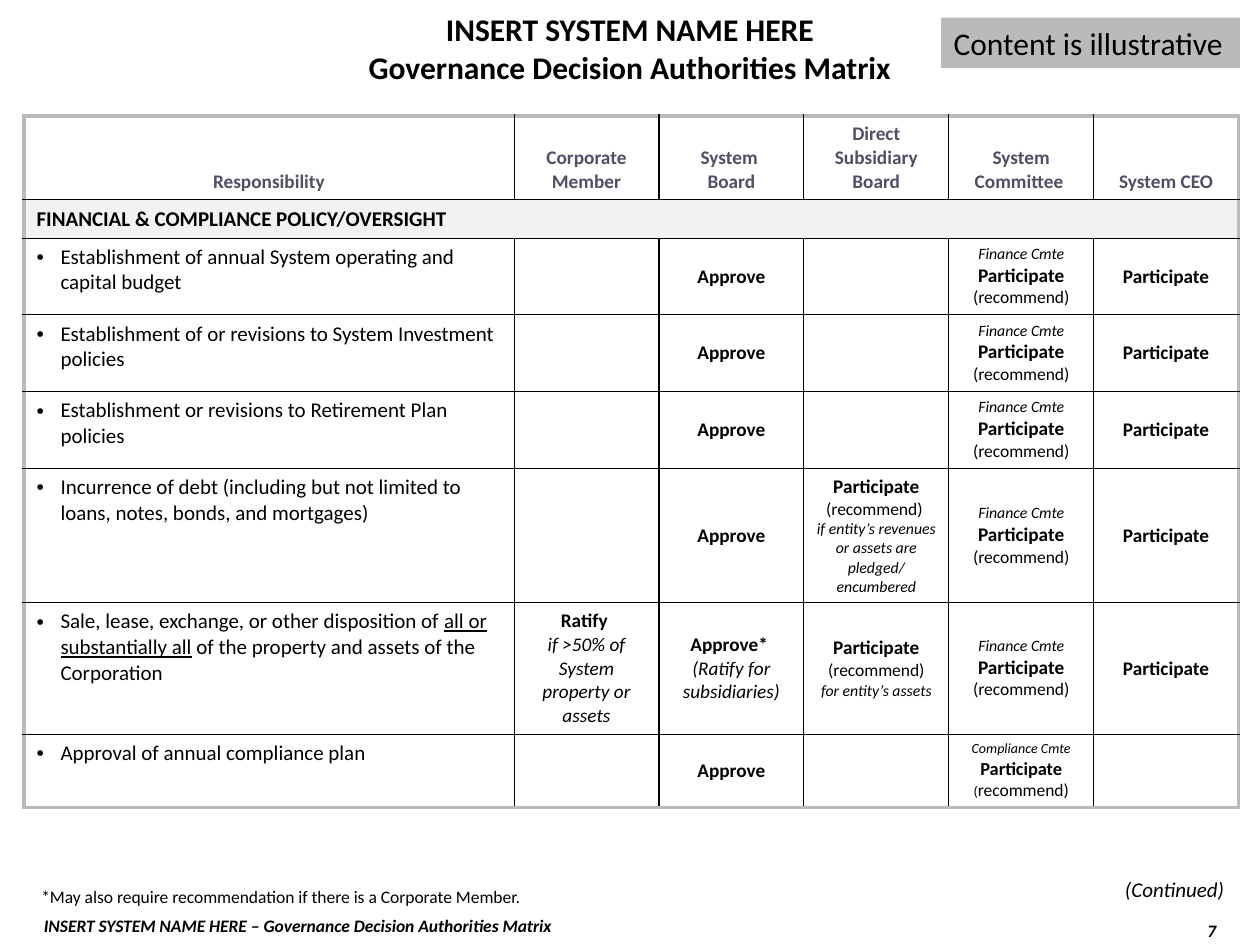
import copy
from dataclasses import dataclass

import lxml.etree
import pptx
import pptx.dml.color
import pptx.enum.shapes
import pptx.enum.text
import pptx.oxml.ns
import pptx.util

Inches = pptx.util.Inches
Align = pptx.enum.text.PP_ALIGN
Anchor = pptx.enum.text.MSO_ANCHOR
qn = pptx.oxml.ns.qn


@dataclass(frozen=True)
class Theme:
    font: str = "Calibri"
    ink: str = "000000"
    heading: str = "4F4F67"
    frame: str = "BABABA"
    section: str = "F2F2F2"
    frame_width: float = 2.25
    grid_width: float = 0.75
    title: float = 18
    body: float = 12
    decision: float = 11
    detail: float = 10
    condition: float = 9
    small: float = 8


THEME = Theme()


@dataclass(frozen=True)
class Words:
    text: str
    size: float = THEME.decision
    bold: bool = False
    italic: bool = False
    underline: bool = False
    color: str = THEME.ink


Entry = list[list[Words]]  # paragraphs of styled words


@dataclass(frozen=True)
class Duty:
    height: float
    responsibility: list[Words]
    member: Entry
    board: Entry
    subsidiary: Entry
    committee: Entry
    ceo: Entry
    committee_anchor: Anchor = Anchor.MIDDLE


def duty_text(text: str, underline: bool = False) -> Words:
    return Words(text, THEME.body, underline=underline)


def decision(text: str, size: float = THEME.decision) -> Words:
    return Words(text, size, bold=True)


def condition(text: str, size: float = THEME.condition) -> Words:
    return Words(text, size, italic=True)


def recommend(text: str = "(recommend)") -> Words:
    return Words(text, THEME.detail)


APPROVE = [[decision("Approve")]]
PARTICIPATE = [[decision("Participate")]]
FINANCE = [[condition("Finance Cmte\n"), decision("Participate\n"), recommend()]]
COMPLIANCE = [[condition("Compliance Cmte\n", THEME.small), decision("Participate\n", 10.5),
               Words("(", THEME.small), recommend("recommend)")]]

HEADINGS = ["Responsibility", "Corporate Member", "System \nBoard",
            "Direct Subsidiary Board", "System Committee ", "System CEO"]
HEADING_HEIGHT, SECTION_HEIGHT = 0.65, 0.3
COLUMN_WIDTHS = [3.89] + [1.15] * 5

DUTIES = [
    Duty(0.6, [duty_text("Establishment of annual System operating and capital budget")],
         [], APPROVE, [], FINANCE, PARTICIPATE),
    Duty(0.6, [duty_text("Establishment of or revisions to System Investment policies")],
         [], APPROVE, [], FINANCE, PARTICIPATE),
    Duty(0.6, [duty_text("Establishment or revisions to Retirement Plan policies")],
         [], APPROVE, [], FINANCE, PARTICIPATE),
    Duty(1.05, [duty_text("Incurrence of debt (including but not limited to loans, notes, "
                          "bonds, and mortgages)")],
         [], APPROVE,
         [[decision("Participate "), recommend("(recommend) \n"),
           condition("if entity’s revenues or assets are pledged/\nencumbered")]],
         FINANCE, PARTICIPATE),
    Duty(1.02, [duty_text("Sale, lease, exchange, or other disposition of "),
                duty_text("all or substantially all", underline=True),
                duty_text(" of the property and assets of the Corporation")],
         [[decision("Ratify \n"),
           condition("if >50% of System property or assets", THEME.decision)]],
         [[decision("Approve* ")], [condition("(Ratify for subsidiaries)", THEME.decision)]],
         [[decision("Participate\n"), recommend("(recommend)\n"),
           condition("for entity’s assets")]],
         FINANCE, PARTICIPATE),
    Duty(0.58, [duty_text("Approval of annual compliance plan")],
         [], APPROVE, [], COMPLIANCE, [], Anchor.TOP),
]


def add_words(paragraph, words: Words) -> None:
    """Add styled runs, giving each line break the format of the run before it."""
    for index, line in enumerate(words.text.split("\n")):
        if index:
            paragraph.add_line_break()
            paragraph._p[-1].append(copy.deepcopy(run._r.rPr))
        if line:
            run = paragraph.add_run()
            run.text = line
            font = run.font
            font.name, font.size = THEME.font, pptx.util.Pt(words.size)
            font.bold, font.italic, font.underline = words.bold, words.italic, words.underline
            font.color.rgb = pptx.dml.color.RGBColor.from_string(words.color)


def write(frame, entry: Entry, align: Align = Align.LEFT) -> None:
    for index, parts in enumerate(entry):
        paragraph = frame.add_paragraph() if index else frame.paragraphs[0]
        paragraph.alignment = align
        for words in parts:
            add_words(paragraph, words)


def set_fill(fill, color: str) -> None:
    fill.solid()
    fill.fore_color.rgb = pptx.dml.color.RGBColor.from_string(color)


def add_bullet(paragraph, indent: float = 0.19) -> None:
    properties = paragraph._p.get_or_add_pPr()
    properties.set("marL", str(Inches(indent)))
    properties.set("indent", str(-Inches(indent)))
    lxml.etree.SubElement(properties, qn("a:buFont"), typeface="Arial")
    lxml.etree.SubElement(properties, qn("a:buChar"), char="•")


def draw_borders(table) -> None:
    """Rule every cell thinly, with a heavier frame round the table."""
    last_row, last_column = len(table.rows) - 1, len(table.columns) - 1
    for row in range(last_row + 1):
        for column in range(last_column + 1):
            cell = table.cell(row, column)
            span = cell.span_width if cell.is_merge_origin else 1
            outer_sides = {"lnL": column == 0, "lnR": column + span - 1 == last_column,
                           "lnT": row == 0, "lnB": row == last_row}
            properties = cell._tc.get_or_add_tcPr()
            for position, (side, outer) in enumerate(outer_sides.items()):
                width = THEME.frame_width if outer else THEME.grid_width
                line = lxml.etree.Element(qn(f"a:{side}"), w=str(pptx.util.Pt(width)))
                solid = lxml.etree.SubElement(line, qn("a:solidFill"))
                lxml.etree.SubElement(solid, qn("a:srgbClr"),
                                      val=THEME.frame if outer else THEME.ink)
                properties.insert(position, line)


def add_matrix(slide) -> None:
    heights = [HEADING_HEIGHT, SECTION_HEIGHT] + [duty.height for duty in DUTIES]
    table = slide.shapes.add_table(
        len(heights), len(COLUMN_WIDTHS), Inches(0.19), Inches(0.92),
        Inches(sum(COLUMN_WIDTHS)), Inches(sum(heights))).table
    table.first_row = table.horz_banding = False
    for column, width in zip(table.columns, COLUMN_WIDTHS):
        column.width = Inches(width)
    for row, height in zip(table.rows, heights):
        row.height = Inches(height)
    for cell in table.iter_cells():
        cell.fill.background()

    for cell, heading in zip(table.rows[0].cells, HEADINGS):
        cell.vertical_anchor = Anchor.BOTTOM
        write(cell.text_frame, [[Words(heading, bold=True, color=THEME.heading)]], Align.CENTER)

    section = table.cell(1, 0)
    section.merge(table.cell(1, len(COLUMN_WIDTHS) - 1))
    set_fill(section.fill, THEME.section)
    write(section.text_frame, [[decision("FINANCIAL & COMPLIANCE POLICY/OVERSIGHT", THEME.body)]])

    for row, duty in enumerate(DUTIES, start=2):
        responsibility = table.cell(row, 0).text_frame
        write(responsibility, [duty.responsibility])
        add_bullet(responsibility.paragraphs[0])
        authorities = [duty.member, duty.board, duty.subsidiary, duty.committee, duty.ceo]
        for column, entry in enumerate(authorities, start=1):
            cell = table.cell(row, column)
            cell.vertical_anchor = Anchor.MIDDLE
            write(cell.text_frame, entry, Align.CENTER)
        table.cell(row, 4).vertical_anchor = duty.committee_anchor
    draw_borders(table)


def add_note(slide, left: float, top: float, width: float, height: float, words: Words,
             align: Align = Align.LEFT, wrap: bool = True) -> None:
    note = slide.shapes.add_textbox(Inches(left), Inches(top), Inches(width), Inches(height))
    note.text_frame.word_wrap = wrap
    write(note.text_frame, [[words]], align)


def add_title(slide) -> None:
    title = slide.shapes.title
    title.left, title.top, title.width, title.height = 0, 0, Inches(10), Inches(0.76)
    title.text_frame.vertical_anchor = Anchor.MIDDLE
    write(title.text_frame, [[decision(
        "INSERT SYSTEM NAME HERE\nGovernance Decision Authorities Matrix", THEME.title)]],
        Align.CENTER)


def add_illustrative_tag(slide) -> None:
    tag = slide.shapes.add_shape(pptx.enum.shapes.MSO_SHAPE.RECTANGLE,
                                 Inches(7.47), Inches(0.14), Inches(2.37), Inches(0.4))
    tag.shadow.inherit = False
    set_fill(tag.fill, THEME.frame)
    tag.line.fill.background()
    tag.text_frame.word_wrap = False
    tag.text_frame.vertical_anchor = Anchor.TOP
    write(tag.text_frame, [[Words("Content is illustrative", THEME.title)]])


def main() -> None:
    deck = pptx.Presentation()
    deck.slide_width, deck.slide_height = Inches(10), Inches(7.5)
    slide = deck.slides.add_slide(deck.slide_layouts[5])
    add_title(slide)
    add_matrix(slide)
    add_note(slide, 0.25, 7.21, 6.5, 0.27, Words(
        "INSERT SYSTEM NAME HERE – Governance Decision Authorities Matrix",
        THEME.detail, bold=True, italic=True))
    add_note(slide, 7.64, 7.25, 2.11, 0.25,
             Words("7", THEME.detail, bold=True, italic=True), Align.RIGHT)
    add_note(slide, 8.83, 6.91, 0.99, 0.3, condition("(Continued)", THEME.body), wrap=False)
    add_illustrative_tag(slide)
    add_note(slide, 0.23, 6.98, 8.13, 0.27, Words(
        "*May also require recommendation if there is a Corporate Member.", THEME.detail))
    deck.save("out.pptx")


if __name__ == "__main__":
    main()
